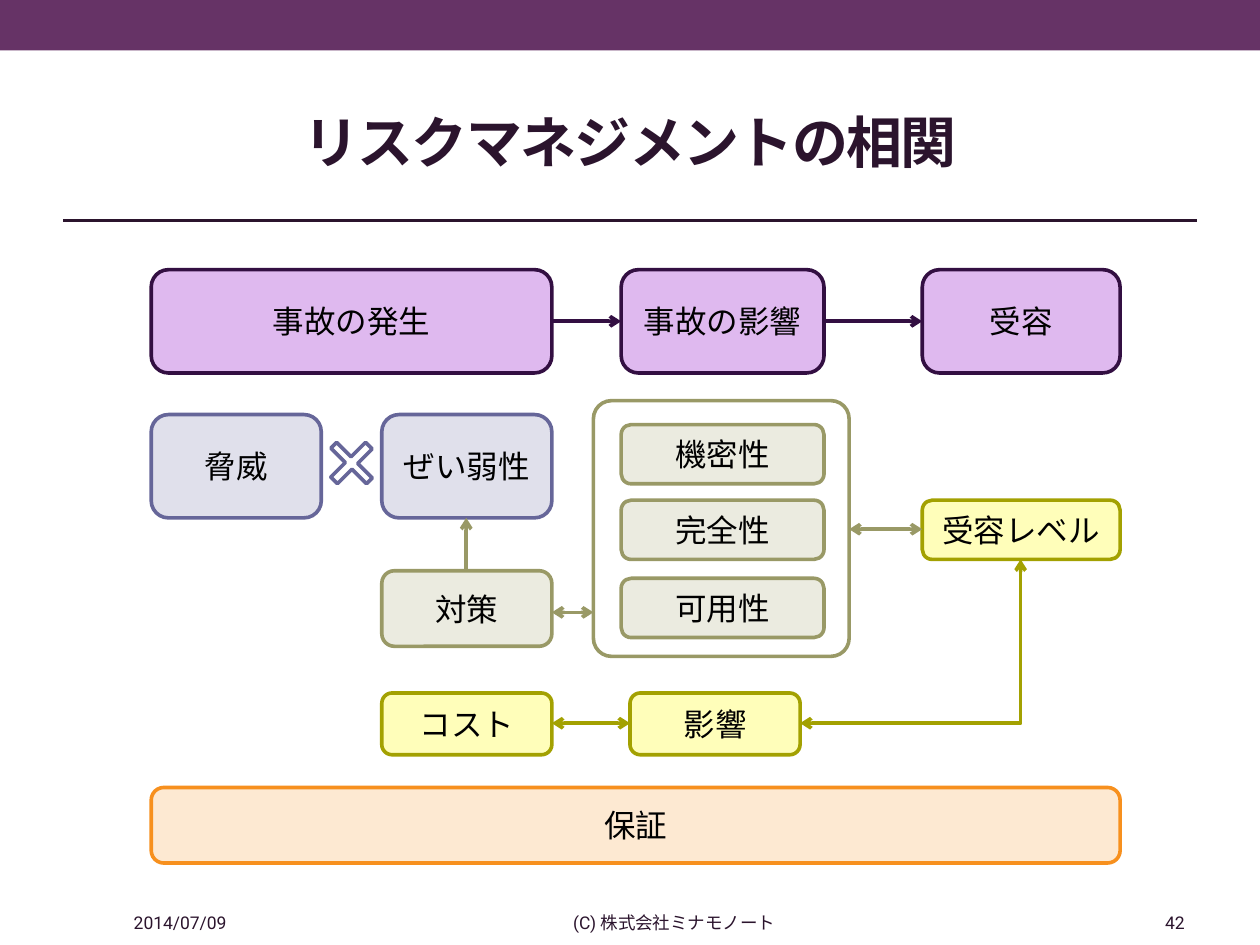
import pptx
import pptx.util
import pptx.dml.color
import pptx.enum.shapes
import pptx.enum.text
import pptx.oxml.ns
import pptx.oxml.xmlchemy

Inches = pptx.util.Inches
Pt = pptx.util.Pt
RGBColor = pptx.dml.color.RGBColor
Shape = pptx.enum.shapes.MSO_SHAPE
Link = pptx.enum.shapes.MSO_CONNECTOR
Align = pptx.enum.text.PP_ALIGN
Middle = pptx.enum.text.MSO_ANCHOR.MIDDLE

WHITE = RGBColor(0xFF, 0xFF, 0xFF)
BLACK = RGBColor(0x00, 0x00, 0x00)
BAND = RGBColor(0x66, 0x33, 0x66)
INK = RGBColor(0x2B, 0x14, 0x2D)
PLUM = RGBColor(0x33, 0x0F, 0x42)
LILAC = RGBColor(0xDF, 0xB9, 0xEF)
SLATE = RGBColor(0x66, 0x66, 0x99)
MIST = RGBColor(0xE0, 0xE0, 0xEB)
MOSS = RGBColor(0x99, 0x99, 0x66)
SAND = RGBColor(0xEB, 0xEB, 0xE0)
GOLD = RGBColor(0xA3, 0xA1, 0x01)
LEMON = RGBColor(0xFF, 0xFE, 0xBA)
ORANGE = RGBColor(0xF7, 0x90, 0x1E)
PEACH = RGBColor(0xFD, 0xE9, 0xD2)


def write(shape, text, size=18, font="Roboto", color=BLACK, bold=False,
          align=Align.CENTER, space=None, inset=0.0):
    frame = shape.text_frame
    frame.word_wrap = True
    frame.vertical_anchor = Middle
    frame.margin_left = frame.margin_right = Inches(inset)
    frame.margin_top = frame.margin_bottom = 0
    para = frame.paragraphs[0]
    para.alignment = align
    run = para.add_run()
    run.text = text
    run.font.size = Pt(size)
    run.font.name = font
    run.font.bold = bold
    run.font.color.rgb = color
    if space is not None:
        run.font._element.set("spc", str(space * 100))


class Board:
    width = Pt(2.08)

    def __init__(self, slide):
        self.shapes = slide.shapes

    def box(self, area, fill, line=None, text=None, kind=Shape.ROUNDED_RECTANGLE,
            round=None, turn=0):
        shape = self.shapes.add_shape(kind, *map(Inches, area))
        shape.shadow.inherit = False
        shape.fill.solid()
        shape.fill.fore_color.rgb = fill
        shape.rotation = turn
        if round is not None:
            shape.adjustments[0] = round
        if line is None:
            shape.line.fill.background()
        else:
            shape.line.color.rgb = line
            shape.line.width = self.width
        if text:
            write(shape, text)

    def label(self, area, text, **style):
        shape = self.shapes.add_textbox(*map(Inches, area))
        write(shape, text, color=INK, inset=0.1, **style)

    def link(self, start, end, color, ends=(), bent=False, width=None):
        kind = Link.ELBOW if bent else Link.STRAIGHT
        line = self.shapes.add_connector(kind, *map(Inches, start + end))
        line.line.color.rgb = color
        line.line.width = width or self.width
        props = line._element.spPr
        if bent:
            props.find(pptx.oxml.ns.qn("a:prstGeom")).set("prst", "bentConnector2")
        for name in ends:
            tip = pptx.oxml.xmlchemy.OxmlElement(f"a:{name}End")
            tip.set("type", "arrow")
            props.find(pptx.oxml.ns.qn("a:ln")).append(tip)
        props.append(pptx.oxml.xmlchemy.OxmlElement("a:effectLst"))


def main():
    deck = pptx.Presentation()
    deck.slide_width, deck.slide_height = Inches(10), Inches(7.5)
    board = Board(deck.slides.add_slide(deck.slide_layouts[6]))
    tail, both = ("tail",), ("head", "tail")

    board.box((0, 0, 10, 0.4), BAND, kind=Shape.RECTANGLE)
    board.link((0.5, 1.75), (9.5, 1.75), INK, width=Pt(1.5))
    board.label((0.5, 0.58, 9, 1.08), "リスクマネジメントの相関",
                size=32, font="Arial", bold=True, space=-1)
    for left, width, text, align in (
            (0.5, 1.86, "2014/07/09", Align.CENTER),
            (2.45, 5.8, "(C) 株式会社ミナモノート", Align.CENTER),
            (8.33, 1.17, "42", Align.RIGHT)):
        board.label((left, 7.14, width, 0.36), text, size=10, align=align)

    left, mid, core, right = 1.2, 3.03, 4.93, 7.32
    small, wide, last = 1.35, 1.61, 1.57
    edge = mid + small

    board.box((4.71, 3.18, 2.03, 2.03), WHITE, MOSS, round=0.071)
    for x, width, text in ((left, edge - left, "事故の発生"),
                           (core, wide, "事故の影響"), (right, last, "受容")):
        board.box((x, 2.14, width, 0.82), LILAC, PLUM, text)
    for start, end in ((edge, core), (core + wide, right)):
        board.link((start, 2.55), (end, 2.55), PLUM, tail)

    for x, text in ((left, "脅威"), (mid, "ぜい弱性")):
        board.box((x, 3.29, small, 0.82), MIST, SLATE, text)
    board.box((2.59, 3.48, 0.4, 0.39), WHITE, SLATE, kind=Shape.CROSS,
              round=0.417, turn=45)

    for y, text in ((3.37, "機密性"), (3.97, "完全性"), (4.59, "可用性")):
        board.box((core, y, wide, 0.47), SAND, MOSS, text)
    board.box((mid, 4.53, small, 0.6), SAND, MOSS, "対策")
    board.link((3.7, 4.53), (3.7, 4.11), MOSS, tail)

    board.box((right, 3.97, last, 0.47), LEMON, GOLD, "受容レベル")
    board.link((6.74, 4.2), (right, 4.2), MOSS, both)
    board.link((edge, 4.86), (4.71, 4.86), MOSS, both)

    board.box((left, 6.25, right + last - left, 0.6), PEACH, ORANGE, "保証")
    for x, text in ((mid, "コスト"), (5, "影響")):
        board.box((x, 5.5, small, 0.49), LEMON, GOLD, text)
    board.link((edge, 5.74), (5, 5.74), GOLD, both)
    board.link((5 + small, 5.74), (8.1, 4.44), GOLD, both, bent=True)

    deck.save("out.pptx")


if __name__ == "__main__":
    main()
